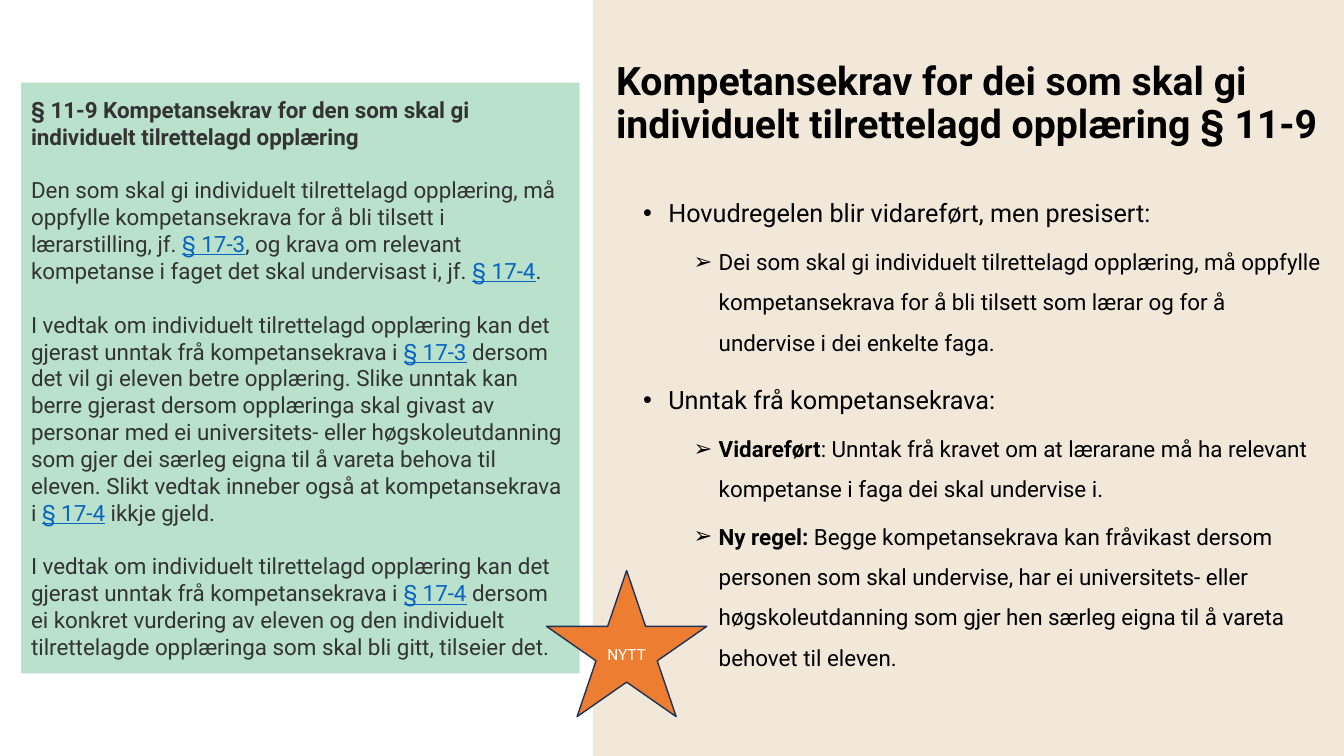
from lxml import etree
from pptx import Presentation
from pptx.dml.color import RGBColor
from pptx.enum.shapes import MSO_SHAPE as Preset
from pptx.enum.text import MSO_ANCHOR as Anchor, MSO_AUTO_SIZE as AutoSize, PP_ALIGN as Align
from pptx.oxml.ns import qn
from pptx.util import Inches, Pt

FONT = "Roboto"
COLORS = {
    "panel": "F2E8DA",
    "law_box": "B9E1CC",
    "law_text": "333333",
    "reference": "0563C1",
    "star": "ED7D31",
    "star_line": "1E3256",
    "black": "000000",
    "white": "FFFFFF",
}

TITLE = "Kompetansekrav for dei som skal gi individuelt tilrettelagd opplæring § 11-9"

# Text between bars is emphasised: references in the law, bold words in the bullets.
LAW_HEADING = "§ 11-9 Kompetansekrav for den som skal gi individuelt tilrettelagd opplæring"
LAW_PARAGRAPHS = [
    "Den som skal gi individuelt tilrettelagd opplæring, må oppfylle kompetansekrava for å bli "
    "tilsett i lærarstilling, jf. |§ 17-3|, og krava om relevant kompetanse i faget det skal "
    "undervisast i, jf. |§ 17-4|.",
    "I vedtak om individuelt tilrettelagd opplæring kan det gjerast unntak frå kompetansekrava "
    "i |§ 17-3| dersom det vil gi eleven betre opplæring. Slike unntak kan berre gjerast dersom "
    "opplæringa skal givast av personar med ei universitets- eller høgskoleutdanning som gjer dei "
    "særleg eigna til å vareta behova til eleven. Slikt vedtak inneber også at kompetansekrava "
    "i |§ 17-4| ikkje gjeld.",
    "I vedtak om individuelt tilrettelagd opplæring kan det gjerast unntak frå kompetansekrava "
    "i |§ 17-4| dersom ei konkret vurdering av eleven og den individuelt tilrettelagde opplæringa "
    "som skal bli gitt, tilseier det.",
]

BULLETS = [
    (0, "Hovudregelen blir vidareført, men presisert:"),
    (1, "Dei som skal gi individuelt tilrettelagd opplæring, må oppfylle kompetansekrava for å "
        "bli tilsett som lærar og for å undervise i dei enkelte faga."),
    (0, "Unntak frå kompetansekrava:"),
    (1, "|Vidareført|: Unntak frå kravet om at lærarane må ha relevant kompetanse i faga dei "
        "skal undervise i."),
    (1, "|Ny regel: |Begge kompetansekrava kan fråvikast dersom personen som skal undervise, har "
        "ei universitets- eller høgskoleutdanning som gjer hen særleg eigna til å vareta behovet "
        "til eleven."),
]
# Level: bullet sign, left margin in inches, text size, space before
BULLET_LEVELS = {0: ("•", 0.25, 18, 10), 1: ("➢", 0.75, 16, 5)}


def color(name):
    return RGBColor.from_string(COLORS[name])


def style(run, size, color_name, bold=False, underline=False):
    font = run.font
    font.name, font.size = FONT, Pt(size)
    font.bold, font.underline = bold, underline
    font.color.rgb = color(color_name)


def add_block(slide, preset, left, top, width, height, fill, line=None):
    block = slide.shapes.add_shape(
        preset, Inches(left), Inches(top), Inches(width), Inches(height))
    block.shadow.inherit = False
    block.fill.solid()
    block.fill.fore_color.rgb = color(fill)
    if line:
        block.line.color.rgb = color(line)
        block.line.width = Pt(1)
    else:
        block.line.fill.background()
    return block


def next_paragraph(frame, index):
    return frame.add_paragraph() if index else frame.paragraphs[0]


def add_marked_runs(paragraph, text):
    """Add the text as runs and yield each with whether it stood between bars."""
    for position, part in enumerate(text.split("|")):
        if part:
            run = paragraph.add_run()
            run.text = part
            yield run, position % 2 == 1


def set_bullet(paragraph, sign, margin):
    properties = paragraph._p.get_or_add_pPr()
    properties.set("marL", str(Inches(margin)))
    properties.set("indent", str(Inches(-0.25)))
    etree.SubElement(properties, qn("a:buFont"), typeface="Arial")
    etree.SubElement(properties, qn("a:buChar"), char=sign)


def place_title(slide):
    title = slide.shapes.title
    title.left, title.top = Inches(6.01), Inches(0.31)
    title.width, title.height = Inches(7.19), Inches(1.45)
    frame = title.text_frame
    frame.text = TITLE
    frame.auto_size = AutoSize.NONE
    frame.vertical_anchor = Anchor.MIDDLE
    heading = frame.paragraphs[0]
    heading.alignment = Align.LEFT
    heading.line_spacing = 0.9
    style(heading.runs[0], 28, "black", bold=True)


def add_bullets(slide):
    frame = slide.shapes.add_textbox(
        Inches(6.28), Inches(1.76), Inches(6.92), Inches(5.07)).text_frame
    frame.word_wrap = True
    for index, (level, text) in enumerate(BULLETS):
        sign, margin, size, space = BULLET_LEVELS[level]
        point = next_paragraph(frame, index)
        point.level = level
        set_bullet(point, sign, margin)
        point.line_spacing = 1.5
        if index:
            point.space_before = Pt(space)
        for run, marked in add_marked_runs(point, text):
            style(run, size, "black", bold=marked)


def add_law_box(slide):
    law_box = add_block(slide, Preset.RECTANGLE, 0.21, 0.82, 5.54, 5.86, "law_box")
    frame = law_box.text_frame
    frame.word_wrap = True
    frame.vertical_anchor = Anchor.MIDDLE
    for index, text in enumerate([LAW_HEADING] + LAW_PARAGRAPHS):
        section = next_paragraph(frame, index)
        section.alignment = Align.LEFT
        if index:
            section.space_before = Pt(19.2)
        for run, is_reference in add_marked_runs(section, text):
            style(run, 16, "reference" if is_reference else "law_text",
                  bold=index == 0, underline=is_reference)


def add_star(slide):
    star = add_block(slide, Preset.STAR_5_POINT, 5.42, 5.66, 1.59, 1.45, "star", "star_line")
    frame = star.text_frame
    frame.text = "NYTT"
    frame.vertical_anchor = Anchor.MIDDLE
    frame.paragraphs[0].alignment = Align.CENTER
    style(frame.paragraphs[0].runs[0], 11, "white")


def main():
    deck = Presentation()
    deck.slide_width, deck.slide_height = Inches(13.33), Inches(7.5)
    slide = deck.slides.add_slide(deck.slide_layouts[5])
    panel = add_block(slide, Preset.RECTANGLE, 5.88, 0, 7.45, 7.5, "panel")
    slide.shapes.title._element.addprevious(panel._element)
    place_title(slide)
    add_bullets(slide)
    add_law_box(slide)
    add_star(slide)
    deck.save("out.pptx")


if __name__ == "__main__":
    main()
